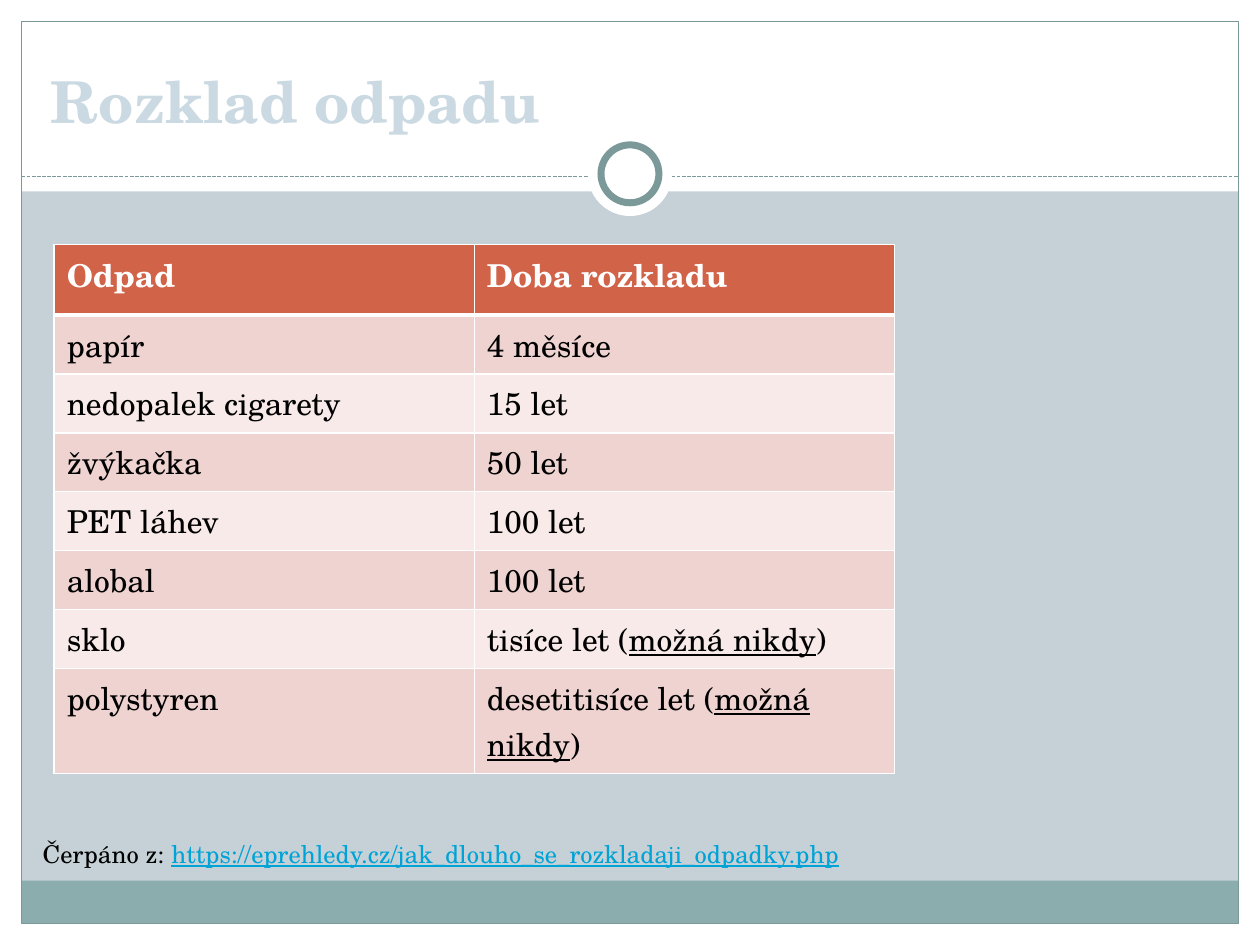
from lxml import etree
from pptx import Presentation
from pptx.dml.color import RGBColor
from pptx.enum.dml import MSO_LINE
from pptx.enum.shapes import MSO_CONNECTOR, MSO_SHAPE
from pptx.enum.text import MSO_ANCHOR, MSO_AUTO_SIZE, PP_ALIGN
from pptx.oxml.ns import qn
from pptx.util import Inches, Pt

RECT, OVAL = MSO_SHAPE.RECTANGLE, MSO_SHAPE.OVAL
LINE, DASH = MSO_CONNECTOR.STRAIGHT, MSO_LINE.SQUARE_DOT
CENTER, BOTTOM = PP_ALIGN.CENTER, MSO_ANCHOR.BOTTOM
FIXED = MSO_AUTO_SIZE.NONE
FONT = "TeX Gyre Schola"
WHITE, BLACK, TEAL = "FFFFFF", "000000", "7C999A"
NEVER = ("možná nikdy", True)
ROWS = [
    ("Odpad", "Doba rozkladu"),
    ("papír", "4 měsíce"),
    ("nedopalek cigarety", "15 let"),
    ("žvýkačka", "50 let"),
    ("PET láhev", "100 let"),
    ("alobal", "100 let"),
    ("sklo", [("tisíce let (", False), NEVER, (")", False)]),
    ("polystyren", [("desetitisíce let (", False), NEVER, (")", False)]),
]


def color(code):
    """Turn a hex string into a colour."""
    return RGBColor.from_string(code)


def add_run(para, text, size, code, bold=False, under=False):
    """Add one formatted run to a paragraph."""
    run = para.add_run()
    run.text = text
    font = run.font
    font.name, font.size, font.bold = FONT, Pt(size), bold
    font.underline = under
    font.color.rgb = color(code)


def add_shape(slide, kind, box, fill=None, line=None, width=0.75):
    """Add a preset shape with optional fill and outline."""
    shape = slide.shapes.add_shape(kind, *map(Inches, box))
    shape.shadow.inherit = False
    if fill:
        shape.fill.solid()
        shape.fill.fore_color.rgb = color(fill)
    else:
        shape.fill.background()
    if line:
        shape.line.color.rgb = color(line)
        shape.line.width = Pt(width)
    else:
        shape.line.fill.background()


def add_frame(slide, left, top, width, height):
    """Draw the white margins, the bottom band and the outline."""
    edge = 0.17
    right, low = left + width - edge, top + height - edge
    for box in (
        (left, low, width, edge),
        (left, top, width, 1.52),
        (left, top, edge, height),
        (right, top, edge, height),
    ):
        add_shape(slide, RECT, box, WHITE)
    inner = width - 2 * edge
    add_shape(slide, RECT, (left + edge, low - 0.34, inner, 0.34), "8CADAE")
    add_shape(slide, RECT, (left + edge, top + edge, inner, height - 2 * edge), line=TEAL)


def add_rule(slide, left, top, width):
    """Draw the dashed rule with the ring at its middle."""
    rule = slide.shapes.add_connector(
        LINE, Inches(left), Inches(top), Inches(left + width), Inches(top)
    )
    rule.line.color.rgb = color(TEAL)
    rule.line.width = Pt(0.75)
    rule.line.dash_style = DASH
    etree.SubElement(rule.element.spPr, qn("a:effectLst"))
    mid, high = left + width / 2, top - 0.02
    for size, line in ((0.67, None), (0.46, TEAL)):
        box = (mid - size / 2, high - size / 2, size, size)
        add_shape(slide, OVAL, box, WHITE, line, 4)


def set_title(slide, left, top, width, height):
    """Place and format the title."""
    title = slide.shapes.title
    title.left, title.top = Inches(left), Inches(top)
    title.width, title.height = Inches(width), Inches(height)
    frame = title.text_frame
    frame.auto_size, frame.vertical_anchor = FIXED, BOTTOM
    para = frame.paragraphs[0]
    para.alignment = CENTER
    add_run(para, "Rozklad odpadu", 33, "CBDAE2", True)


def set_edges(cell, top, bottom):
    """Give a cell white borders."""
    props = cell._tc.get_or_add_tcPr()
    for side, width in (("L", 1), ("R", 1), ("T", top), ("B", bottom)):
        edge = etree.SubElement(props, qn("a:ln" + side), w=str(Pt(width)))
        fill = etree.SubElement(edge, qn("a:solidFill"))
        etree.SubElement(fill, qn("a:srgbClr"), val=WHITE)


def add_grid(slide, left, top, width, height):
    """Add the table of decay times."""
    box = map(Inches, (left, top, width, height))
    table = slide.shapes.add_table(len(ROWS), len(ROWS[0]), *box).table
    for col in table.columns:
        col.width = Inches(width / len(ROWS[0]))
    for i, row in enumerate(ROWS):
        head = i == 0
        table.rows[i].height = Inches(0.56 if head else 0.41)
        fill = "D16349" if head else ("F7EAE9", "EED3D0")[i % 2]
        for j, text in enumerate(row):
            cell = table.cell(i, j)
            set_edges(cell, 3 if i == 1 else 1, 3 if head else 1)
            cell.fill.solid()
            cell.fill.fore_color.rgb = color(fill)
            parts = [(text, False)] if isinstance(text, str) else text
            for part, under in parts:
                para = cell.text_frame.paragraphs[0]
                add_run(para, part, 18, WHITE if head else BLACK, head, under)


def add_credit(slide, left, top, width, height):
    """Add the line that names the source."""
    box = slide.shapes.add_textbox(*map(Inches, (left, top, width, height)))
    box.text_frame.word_wrap = True
    para = box.text_frame.paragraphs[0]
    add_run(para, "Čerpáno z: ", 14, BLACK)
    url = "https://eprehledy.cz/jak_dlouho_se_rozkladaji_odpadky.php"
    add_run(para, url, 14, "00A3D6", under=True)


def main():
    """Build and save the slide."""
    deck = Presentation()
    deck.slide_width, deck.slide_height = Inches(10), Inches(7.5)
    slide = deck.slides.add_slide(deck.slide_layouts[5])
    back = slide.background.fill
    back.solid()
    back.fore_color.rgb = color("C5D1D7")
    add_frame(slide, 0, 0, 10, 7.5)
    add_rule(slide, 0.17, 1.4, 9.66)
    set_title(slide, -2.32, 0.29, 9.33, 0.83)
    tree = slide.shapes.title.element.getparent()
    tree.append(slide.shapes.title.element)
    add_grid(slide, 0.43, 1.94, 6.67, 3.43)
    add_credit(slide, 0.24, 6.61, 9.45, 0.34)
    deck.save("out.pptx")


if __name__ == "__main__":
    main()
